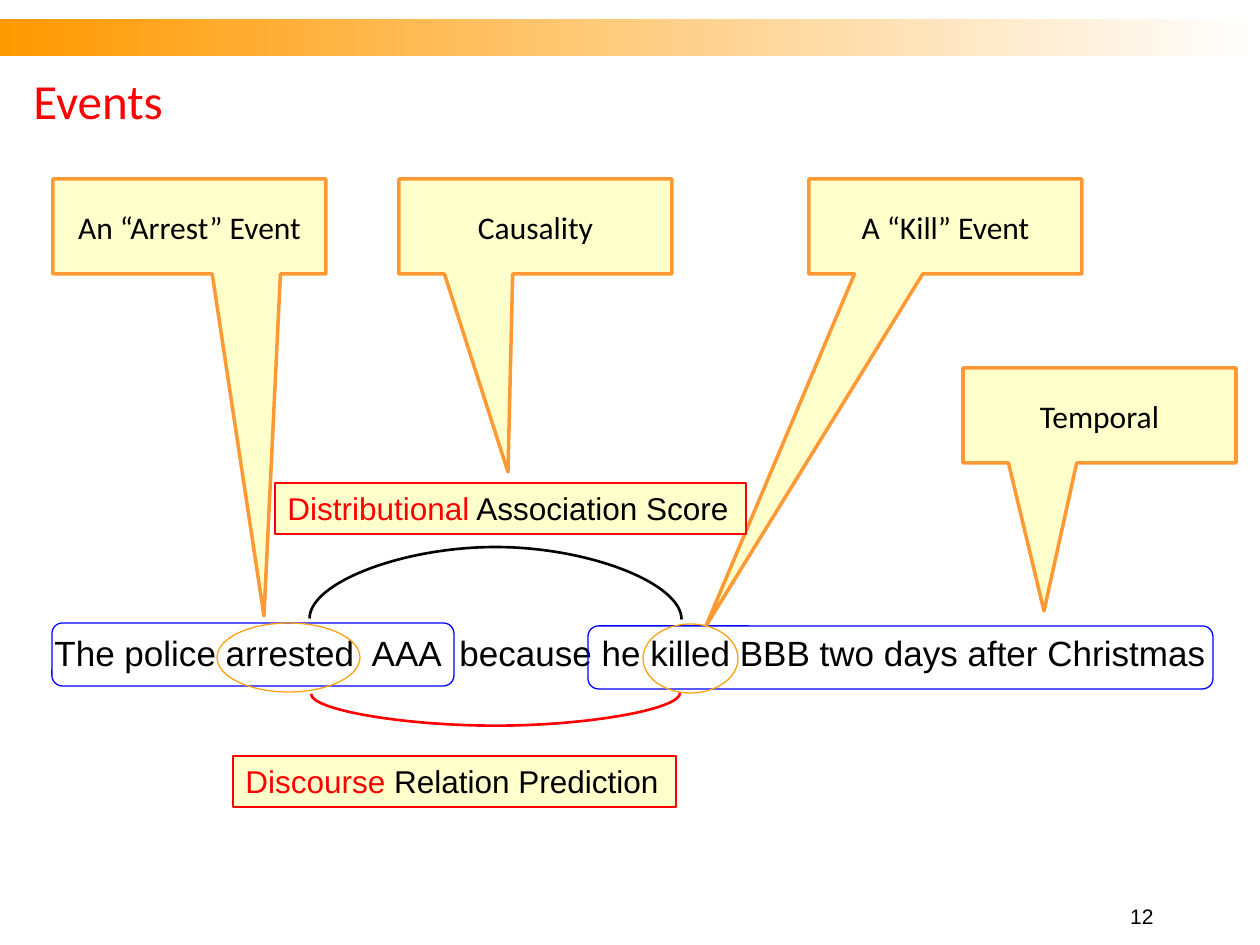
"""Build the slide that explains relations between two events."""
from lxml.etree import SubElement
from pptx import Presentation
from pptx.dml.color import RGBColor
from pptx.enum.shapes import MSO_CONNECTOR as Connector, MSO_SHAPE as Shape
from pptx.enum.text import MSO_ANCHOR as Anchor, MSO_AUTO_SIZE as AutoSize, PP_ALIGN as Align
from pptx.oxml.ns import qn
from pptx.util import Pt

PX = 914400 / 126
BLACK = RGBColor(0x00, 0x00, 0x00)
WHITE = RGBColor(0xFF, 0xFF, 0xFF)
RED = RGBColor(0xFF, 0x00, 0x00)
BLUE = RGBColor(0x00, 0x00, 0xFF)
AMBER = RGBColor(0xFB, 0xA3, 0x13)
ORANGE = RGBColor(0xFF, 0x99, 0x33)
BANNER_ORANGE = RGBColor(0xFF, 0x99, 0x00)
CREAM = RGBColor(0xFF, 0xFF, 0xCC)

TITLE = {"name": "Calibri", "size": Pt(28)}
CALLOUT = {"name": "Calibri", "size": Pt(18)}
LABEL = {"name": "Arial", "size": Pt(18)}
SENTENCE = {"name": "Arial", "size": Pt(20)}
NUMBER = {"name": "Arial", "size": Pt(12)}
FITTED = {"word_wrap": False, "auto_size": AutoSize.SHAPE_TO_FIT_TEXT, "vertical_anchor": Anchor.TOP}
CENTRED = {"word_wrap": True, "vertical_anchor": Anchor.MIDDLE}
LOW = {"word_wrap": True, "vertical_anchor": Anchor.BOTTOM}


def emu(*lengths):
    return [round(length * PX) for length in lengths]


def set_values(target, values):
    for name, value in values.items():
        setattr(target, name, value)


class EventSlide:
    def __init__(self, presentation):
        self.slide = presentation.slides.add_slide(presentation.slide_layouts[6])

    def fill_text(self, shape, runs, font, frame, align=Align.LEFT):
        set_values(shape.text_frame, frame)
        paragraph = shape.text_frame.paragraphs[0]
        paragraph.alignment = align
        for text, color in runs:
            run = paragraph.add_run()
            run.text = text
            set_values(run.font, font)
            run.font.color.rgb = color

    def text(self, box, runs, font, frame, align=Align.LEFT):
        self.fill_text(self.slide.shapes.add_textbox(*emu(*box)), runs, font, frame, align)

    def outline(self, kind, box, color, width=0.75, fill=None):
        shape = self.slide.shapes.add_shape(kind, *emu(*box))
        shape.shadow.inherit = False
        if fill is None:
            shape.fill.background()
        else:
            shape.fill.solid()
            shape.fill.fore_color.rgb = fill
        shape.line.color.rgb = color
        shape.line.width = Pt(width)
        return shape

    def banner(self, box, *colors):
        shape = self.slide.shapes.add_shape(Shape.RECTANGLE, *emu(*box))
        shape.shadow.inherit = False
        shape.line.fill.background()
        shape.fill.gradient()
        shape.fill.gradient_angle = 0
        for stop, color in zip(shape.fill.gradient_stops, colors):
            stop.color.rgb = color

    def callout(self, left, top, tip, text):
        width, height = 273, 95
        shape = self.outline(Shape.RECTANGULAR_CALLOUT, (left, top, width, height), ORANGE, 2, CREAM)
        shape.adjustments[0] = (tip[0] - left) / width - 0.5
        shape.adjustments[1] = (tip[1] - top) / height - 0.5
        self.fill_text(shape, [(text, BLACK)], CALLOUT, CENTRED, Align.CENTER)

    def label(self, box, *runs):
        shape = self.outline(Shape.RECTANGLE, box, RED, fill=CREAM)
        self.fill_text(shape, runs, LABEL, FITTED)

    def arc(self, begin, end, rotation, bulge, color):
        connector = self.slide.shapes.add_connector(Connector.CURVE, *emu(*begin, *end))
        connector.line.color.rgb = color
        connector.line.width = Pt(1.5)
        properties = connector.element.spPr
        properties.find(qn("a:xfrm")).set("rot", str(rotation * 60000))
        guides = properties.find(qn("a:prstGeom")).find(qn("a:avLst"))
        SubElement(guides, qn("a:gd"), name="adj1", fmla=f"val {-bulge * 100000}")
        SubElement(properties, qn("a:effectLst"))


def main():
    presentation = Presentation()
    presentation.slide_width, presentation.slide_height = emu(1260, 945)
    page = EventSlide(presentation)
    page.banner((0, 19, 1260, 37), BANNER_ORANGE, WHITE)
    page.text((21, 63, 1134, 73), [("Events", RED)], TITLE, CENTRED)
    page.text((1040, 903, 126, 32), [("12", BLACK)], NUMBER, LOW, Align.RIGHT)
    sentence = "The police arrested  AAA  because he killed BBB two days after Christmas"
    page.text((42, 625, 1193, 55), [(sentence, BLACK)], SENTENCE, FITTED)
    for kind, box, color in (
        (Shape.ROUNDED_RECTANGLE, (52, 623, 402, 63), BLUE),
        (Shape.ROUNDED_RECTANGLE, (588, 626, 625, 63), BLUE),
        (Shape.OVAL, (217, 623, 143, 69), AMBER),
        (Shape.OVAL, (643, 624, 95, 69), AMBER),
    ):
        page.outline(kind, box, color)
    page.callout(809, 179, (706, 626), "A “Kill” Event")
    page.callout(53, 179, (264, 616), "An “Arrest” Event")
    page.label((275, 483, 471, 51), ("Distributional", RED), (" Association Score", BLACK))
    page.label((233, 756, 443, 51), ("Discourse ", RED), ("Relation Prediction", BLACK))
    page.callout(399, 179, (508, 472), "Causality")
    page.arc((496, 433), (495, 805), 270, 72, BLACK)
    page.arc((496, 878), (495, 509), 90, 32, RED)
    page.callout(963, 368, (1044, 611), "Temporal")
    presentation.save("out.pptx")


if __name__ == "__main__":
    main()
